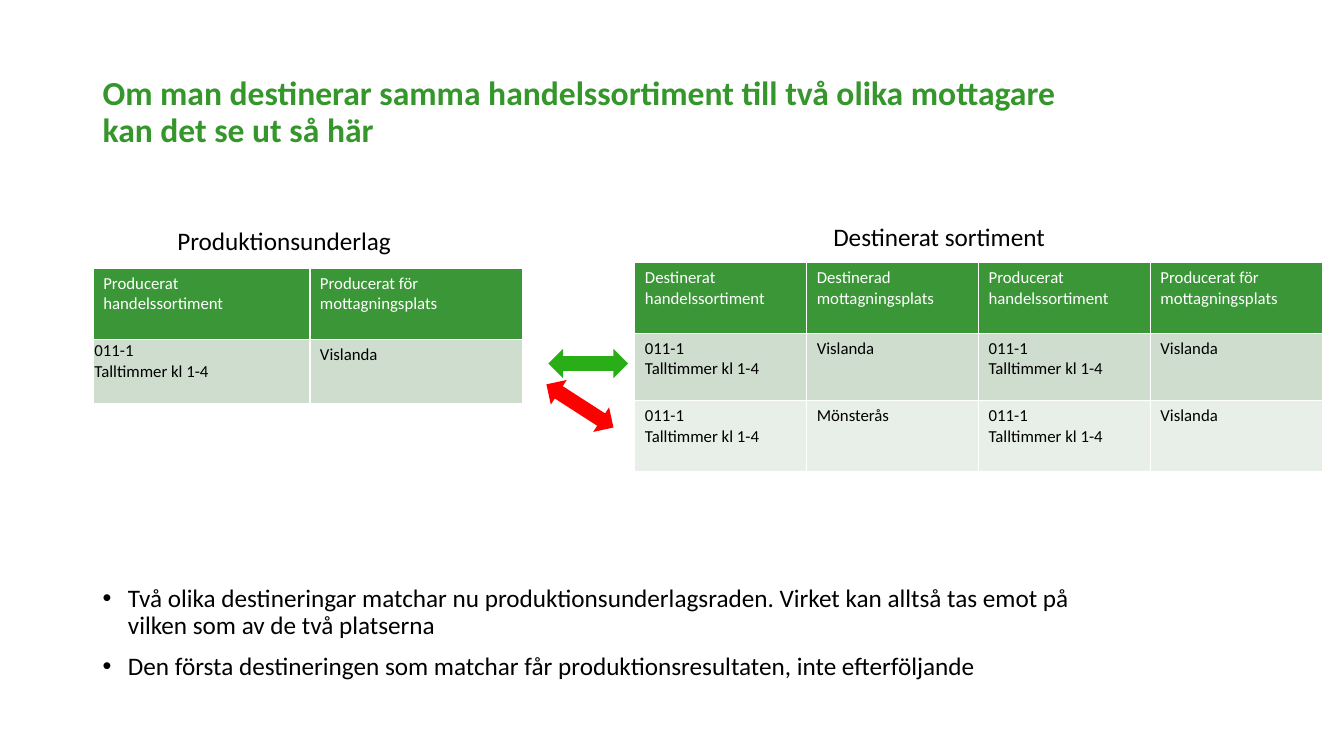
from lxml.etree import SubElement
from pptx import Presentation
from pptx.dml.color import RGBColor
from pptx.enum.shapes import MSO_SHAPE
from pptx.enum.text import MSO_ANCHOR, MSO_AUTO_SIZE, PP_ALIGN
from pptx.oxml.ns import qn
from pptx.util import Cm, Pt

COLORS = {
    "title": "35962B", "text": "000000", "white": "FFFFFF",
    "header": "3B9637", "band_dark": "CEDDCE", "band_light": "E8EFE8",
    "match": "2AAE18", "no_match": "FF0000",
}
ROW_FILLS = ["header", "band_dark", "band_light"]


def format_text(tf, size, color, bold=False):
    for p in tf.paragraphs:
        for r in p.runs:
            r.font.name = "Calibri"
            r.font.size = Pt(size)
            r.font.bold = bold
            r.font.color.rgb = RGBColor.from_string(COLORS[color])


def add_cell_borders(cell):
    """Draw a 1 pt white line on all four sides; call before filling the cell."""
    tcPr = cell._tc.get_or_add_tcPr()
    for side in ("a:lnL", "a:lnR", "a:lnT", "a:lnB"):
        ln = SubElement(tcPr, qn(side), w=str(Pt(1)))
        fill = SubElement(ln, qn("a:solidFill"))
        SubElement(fill, qn("a:srgbClr"), val=COLORS["white"])


prs = Presentation()
prs.slide_width, prs.slide_height = Cm(33.87), Cm(19.05)
s = prs.slides.add_slide(prs.slide_layouts[1])

# Title
title = s.shapes.title
title.left, title.top, title.width, title.height = Cm(2.33), Cm(1.01), Cm(25.65), Cm(3.68)
tf = title.text_frame
tf.text = "Om man destinerar samma handelssortiment till två olika mottagare kan det se ut så här"
tf.auto_size = MSO_AUTO_SIZE.NONE
tf.vertical_anchor = MSO_ANCHOR.MIDDLE
tf.paragraphs[0].alignment = PP_ALIGN.LEFT
tf.paragraphs[0].line_spacing = 0.9
format_text(tf, 24, "title", bold=True)

# Bullet list
body = s.placeholders[1]
body.left, body.top, body.width, body.height = Cm(2.33), Cm(14.63), Cm(25.65), Cm(3.35)
tf = body.text_frame
tf.text = (
    "Två olika destineringar matchar nu produktionsunderlagsraden. "
    "Virket kan alltså tas emot på vilken som av de två platserna\n"
    "Den första destineringen som matchar får produktionsresultaten, inte efterföljande"
)
tf.auto_size = MSO_AUTO_SIZE.NONE
for p in tf.paragraphs:
    p.line_spacing = 0.9
    p.space_before = Pt(10)
    pPr = p._p.get_or_add_pPr()
    pPr.set("marL", str(Cm(0.64)))
    pPr.set("indent", str(-Cm(0.64)))
    SubElement(pPr, qn("a:buChar"), char="•")
format_text(tf, 18, "text")

# Tables: left, top, column widths, row heights, cell texts
timber = "011-1\nTalltimmer kl 1-4"
produced = ["Producerat handelssortiment", "Producerat för mottagningsplats"]
tables = [
    (2.35, 6.76, [5.46, 5.36], [1.8, 1.62], [produced, [timber, "Vislanda"]]),
    (16.0, 6.62, [4.33] * 4, [1.78, 1.7, 1.78], [
        ["Destinerat\nhandelssortiment", "Destinerad mottagningsplats"] + produced,
        [timber, "Vislanda", timber, "Vislanda"],
        [timber, "Mönsterås", timber, "Vislanda"],
    ]),
]
grids = []
for left, top, widths, heights, rows in tables:
    frame = s.shapes.add_table(len(rows), len(widths), Cm(left), Cm(top),
                               Cm(sum(widths)), Cm(sum(heights)))
    table = frame.table
    grids.append(table)
    for column, width in zip(table.columns, widths):
        column.width = Cm(width)
    for i, texts in enumerate(rows):
        table.rows[i].height = Cm(heights[i])
        for j, text in enumerate(texts):
            cell = table.cell(i, j)
            cell.text = text
            add_cell_borders(cell)
            cell.fill.solid()
            cell.fill.fore_color.rgb = RGBColor.from_string(COLORS[ROW_FILLS[i]])
            format_text(cell.text_frame, 12, "white" if i == 0 else "text")

tight_cell = grids[0].cell(1, 0)
tight_cell.margin_left = tight_cell.margin_right = tight_cell.margin_top = Cm(0.03)
tight_cell.margin_bottom = 0

# Table captions
for text, left, top in [("Produktionsunderlag", 4.22, 5.56),
                        ("Destinerat sortiment", 20.75, 5.44)]:
    caption = s.shapes.add_textbox(Cm(left), Cm(top), Cm(9.04), Cm(1.03))
    tf = caption.text_frame
    tf.word_wrap = True
    tf.text = text
    format_text(tf, 18, "text")

# Arrows between the tables
for color, left, top, angle in [("match", 13.82, 8.79, 0), ("no_match", 13.61, 9.86, 32.8)]:
    arrow = s.shapes.add_shape(MSO_SHAPE.LEFT_RIGHT_ARROW, Cm(left), Cm(top), Cm(2.01), Cm(0.74))
    arrow.rotation = angle
    arrow.shadow.inherit = False
    arrow.fill.solid()
    arrow.fill.fore_color.rgb = RGBColor.from_string(COLORS[color])
    arrow.line.fill.background()

prs.save("out.pptx")
